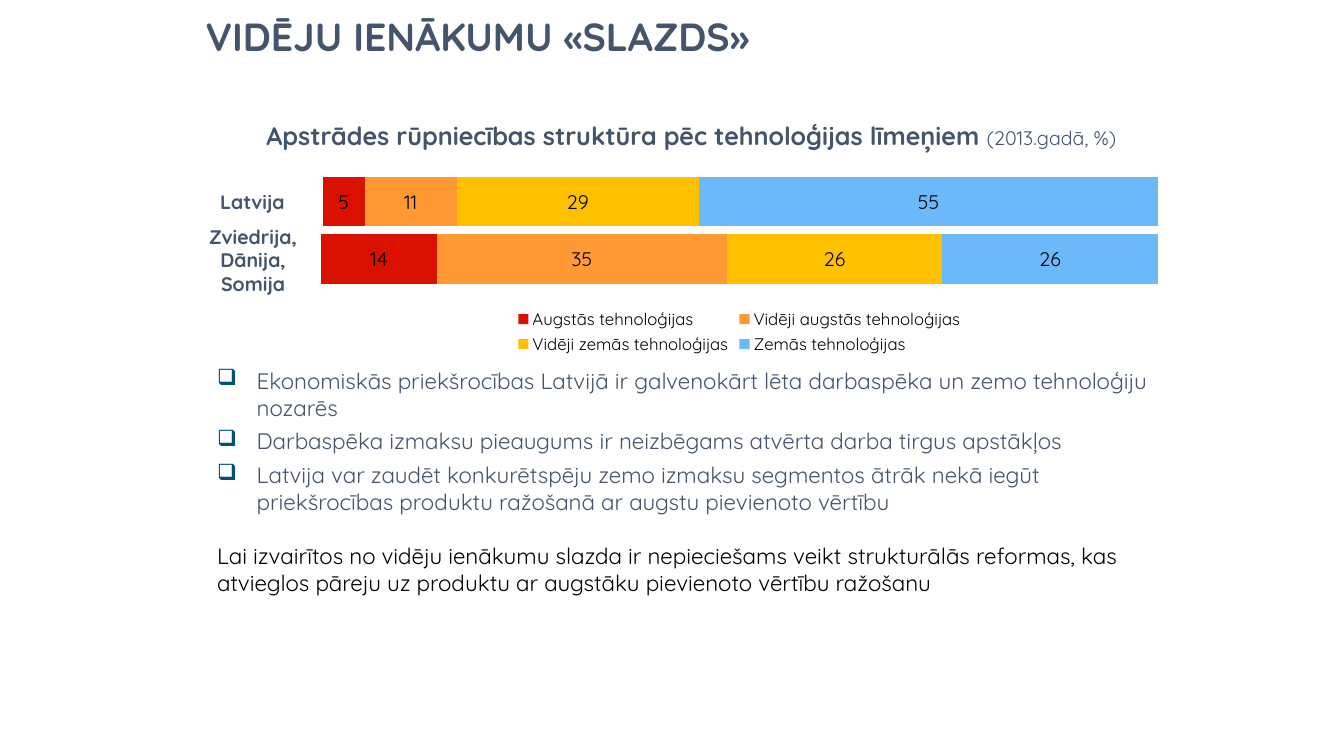
from dataclasses import dataclass

from lxml import etree
from pptx import Presentation
from pptx import util as u
from pptx.chart import data as chart_data
from pptx.dml import color
from pptx.enum import chart as chart_enum, text
from pptx.oxml import ns


@dataclass(frozen=True)
class Theme:
    font: str = "Quicksand"
    slate: str = "44546A"
    black: str = "000000"
    bullet: str = "005374"
    levels: tuple = ("DA1000", "FF9933", "FFC000", "6BB9F9")
    title: int = 28
    heading: int = 18
    body: int = 16
    label: int = 14
    legend: int = 12


class SlideBuilder:
    def __init__(self, slide, theme):
        self.slide = slide
        self.theme = theme

    def style(self, font, size, colour, bold=False):
        font.name = self.theme.font
        font.size = u.Pt(size)
        font.bold = bold
        font.color.rgb = color.RGBColor.from_string(colour)

    def text_box(self, box, lines, size, bold=False, align=text.PP_ALIGN.LEFT):
        shape = self.slide.shapes.add_textbox(*map(u.Cm, box))
        frame = shape.text_frame
        frame.word_wrap = True
        frame.text = "\n".join(lines)
        for paragraph in frame.paragraphs:
            paragraph.alignment = align
            for run in paragraph.runs:
                self.style(run.font, size, self.theme.slate, bold)
        return frame.paragraphs

    def indent(self, paragraph, left, first=0.0):
        properties = paragraph._p.get_or_add_pPr()
        properties.set("marL", str(u.Cm(left)))
        properties.set("indent", str(u.Cm(first)))
        return properties

    def bullet(self, paragraph):
        properties = self.indent(paragraph, 1.5, -1)
        bullet_colour = etree.SubElement(properties, ns.qn("a:buClr"))
        etree.SubElement(bullet_colour, ns.qn("a:srgbClr"), val=self.theme.bullet)
        etree.SubElement(properties, ns.qn("a:buChar"), char="❑")

    def place_plot(self, chart, height):
        plot_area = chart.element.find(".//" + ns.qn("c:plotArea"))
        for layout in plot_area.findall(ns.qn("c:layout")):
            plot_area.remove(layout)
        layout = etree.Element(ns.qn("c:layout"))
        plot_area.insert(0, layout)
        manual = etree.SubElement(layout, ns.qn("c:manualLayout"))
        settings = {"layoutTarget": "inner", "xMode": "edge", "yMode": "edge",
                    "x": 0.018, "y": 0, "w": 0.964, "h": height}
        for name, value in settings.items():
            etree.SubElement(manual, ns.qn("c:" + name), val=str(value))

    def stacked_bar(self, box, names, values, plot_height, legend=False):
        data = chart_data.CategoryChartData()
        data.categories = ["1"]
        for name, value in zip(names, values):
            data.add_series(name, [value])
        frame = self.slide.shapes.add_chart(
            chart_enum.XL_CHART_TYPE.BAR_STACKED_100, *map(u.Cm, box), data)
        chart = frame.chart
        self.style(chart.font, self.theme.label, self.theme.black)
        chart.has_title = False
        chart.has_legend = legend
        if legend:
            chart.legend.position = chart_enum.XL_LEGEND_POSITION.BOTTOM
            chart.legend.include_in_layout = False
            self.style(chart.legend.font, self.theme.legend, self.theme.black)
        for axis in (chart.category_axis, chart.value_axis):
            axis.visible = False
            axis.has_major_gridlines = False
        plot = chart.plots[0]
        plot.gap_width = 40
        plot.overlap = 100
        plot.vary_by_categories = False
        for series, fill in zip(plot.series, self.theme.levels):
            series.format.fill.solid()
            series.format.fill.fore_color.rgb = color.RGBColor.from_string(fill)
            labels = series.data_labels
            labels.show_value = True
            labels.number_format = "#,##0"
            labels.number_format_is_linked = False
            self.style(labels.font, self.theme.label, self.theme.black)
        self.place_plot(chart, plot_height)


def main():
    presentation = Presentation()
    presentation.slide_width = u.Cm(33.87)
    presentation.slide_height = u.Cm(19.05)
    theme = Theme()
    slide = presentation.slides.add_slide(presentation.slide_layouts[6])
    builder = SlideBuilder(slide, theme)
    center = text.PP_ALIGN.CENTER

    title = builder.text_box((4.93, 0.33, 24.66, 2.01),
                             ["VIDĒJU IENĀKUMU «SLAZDS»"], theme.title, True)
    title[0].line_spacing = 0.9

    paragraphs = builder.text_box((4.72, 9.12, 24.61, 5.79), [
        "Ekonomiskās priekšrocības Latvijā ir galvenokārt lēta darbaspēka un zemo tehnoloģiju nozarēs",
        "Darbaspēka izmaksu pieaugums ir neizbēgams atvērta darba tirgus apstākļos",
        "Latvija var zaudēt konkurētspēju zemo izmaksu segmentos ātrāk nekā iegūt "
        "priekšrocības produktu ražošanā ar augstu pievienoto vērtību",
        "Lai izvairītos no vidēju ienākumu slazda ir nepieciešams veikt strukturālās reformas, "
        "kas atvieglos pāreju uz produktu ar augstāku pievienoto vērtību ražošanu",
    ], theme.body)
    *points, conclusion = paragraphs
    for paragraph in paragraphs:
        paragraph.space_before = u.Pt(3)
        paragraph.space_after = u.Pt(2)
    for point in points:
        builder.bullet(point)
    conclusion.space_before = u.Pt(17)
    builder.indent(conclusion, 0.5)
    builder.style(conclusion.runs[0].font, theme.body, theme.black)

    heading = builder.text_box(
        (6.12, 2.9, 22.61, 1.02),
        ["Apstrādes rūpniecības struktūra pēc tehnoloģijas līmeņiem "],
        theme.heading, True, center)
    period = heading[0].add_run()
    period.text = "(2013.gadā, %)"
    builder.style(period.font, theme.label, theme.slate)

    builder.stacked_bar((7.75, 4.22, 21.84, 1.8),
                        [f"Series {number}" for number in range(1, 5)],
                        (5, 11, 29, 55), 0.964)
    builder.stacked_bar((7.7, 5.64, 21.87, 3.4),
                        ("Augstās tehnoloģijas", "Vidēji augstās tehnoloģijas",
                         "Vidēji zemās tehnoloģijas", "Zemās tehnoloģijas"),
                        (14, 35, 26, 26), 0.524, legend=True)
    for box, country in (((4.98, 4.67, 2.77, 0.86), "Latvija"),
                         ((4.5, 5.54, 3.76, 2.06), "Zviedrija, Dānija, Somija")):
        builder.text_box(box, [country], theme.label, True, center)

    presentation.save("out.pptx")


if __name__ == "__main__":
    main()
